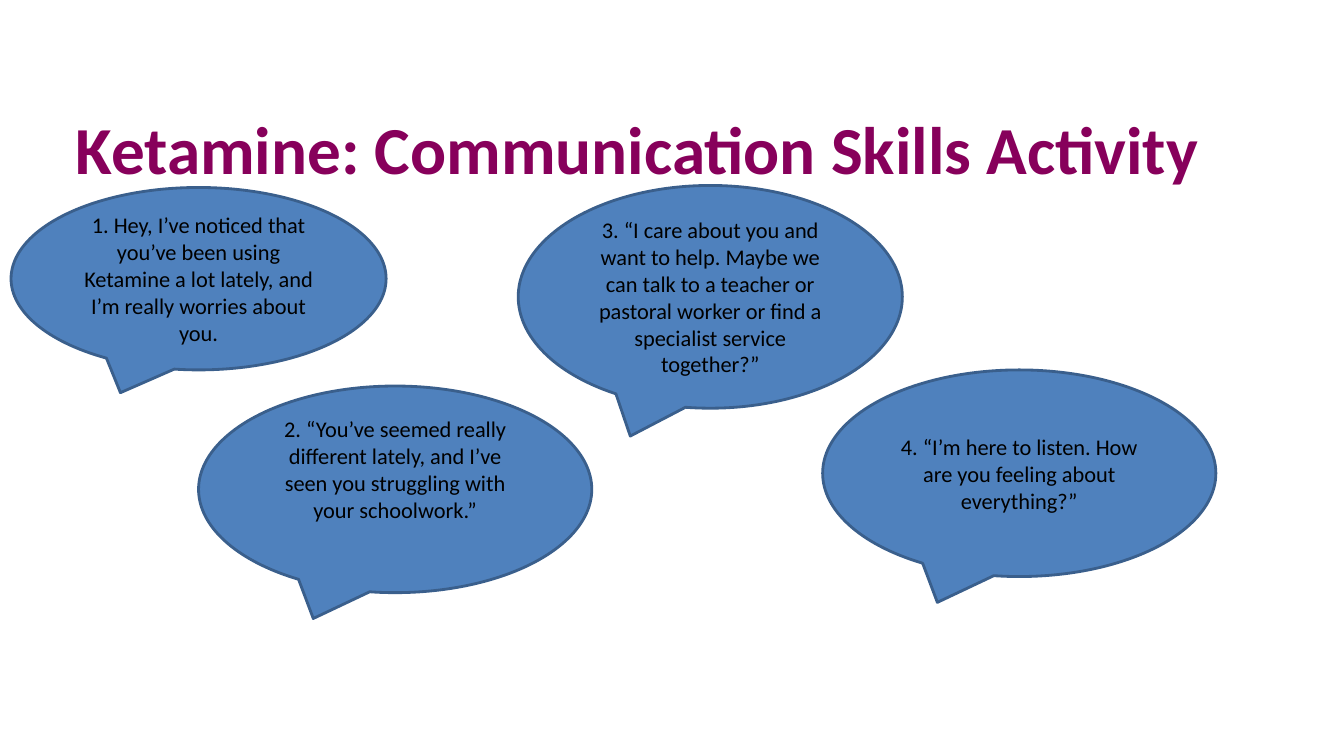
from pptx import Presentation
from pptx import util as u
from pptx.dml.color import RGBColor
from pptx.enum import shapes, text

PX = 9144  # 100 px to the inch
PLUM = RGBColor(0x87, 0x00, 0x5B)
BLUE = RGBColor(0x4F, 0x81, 0xBD)
EDGE = RGBColor(0x3A, 0x5F, 0x8C)
BLACK = RGBColor(0, 0, 0)

# Left, top, width, height, bottom inset, words
BUBBLES = [
    (11, 186, 372, 181, 5,
     "1. Hey, I’ve noticed that you’ve been using Ketamine a lot lately, "
     "and I’m really worries about you."),
    (197, 383, 390, 205, 45,
     "2. “You’ve seemed really different lately, and I’ve seen you "
     "struggling with your schoolwork.”"),
    (514, 184, 381, 221, 5,
     "3. “I care about you and want to help. Maybe we can talk to a teacher "
     "or pastoral worker or find a specialist service together?”"),
    (816, 367, 390, 205, 5,
     "4. “I’m here to listen. How are you feeling about everything?”"),
]


def px(n):
    return u.Emu(n * PX)


def write(frame, words, size, color, bold=False,
          align=text.PP_ALIGN.CENTER, anchor=text.MSO_ANCHOR.MIDDLE):
    frame.word_wrap = True
    frame.auto_size = text.MSO_AUTO_SIZE.NONE
    frame.vertical_anchor = anchor
    para = frame.paragraphs[0]
    para.alignment = align
    run = para.add_run()
    run.text = words
    font = run.font
    font.name, font.size, font.bold = "Calibri", u.Pt(size), bold
    font.color.rgb = color


def head(slide, words):
    title = slide.shapes.title
    title.left, title.top = px(65), px(101)
    title.width, title.height = px(1201), px(69)
    write(title.text_frame, words, 48, PLUM, bold=True,
          align=text.PP_ALIGN.LEFT, anchor=text.MSO_ANCHOR.TOP)


def bubble(slide, left, top, width, height, inset, words):
    shape = slide.shapes.add_shape(
        shapes.MSO_SHAPE.OVAL_CALLOUT,
        px(left), px(top), px(width), px(height))
    shape.shadow.inherit = False
    shape.fill.solid()
    shape.fill.fore_color.rgb = BLUE
    shape.line.color.rgb = EDGE
    shape.line.width = u.Pt(2)
    shape.text_frame.margin_bottom = px(inset)
    write(shape.text_frame, words, 16, BLACK)


def main():
    deck = Presentation()
    deck.slide_width, deck.slide_height = px(1333), px(750)
    slide = deck.slides.add_slide(deck.slide_layouts[5])

    # Title
    head(slide, "Ketamine: Communication Skills Activity")

    # Speech bubbles
    for item in BUBBLES:
        bubble(slide, *item)

    deck.save("out.pptx")


if __name__ == "__main__":
    main()
